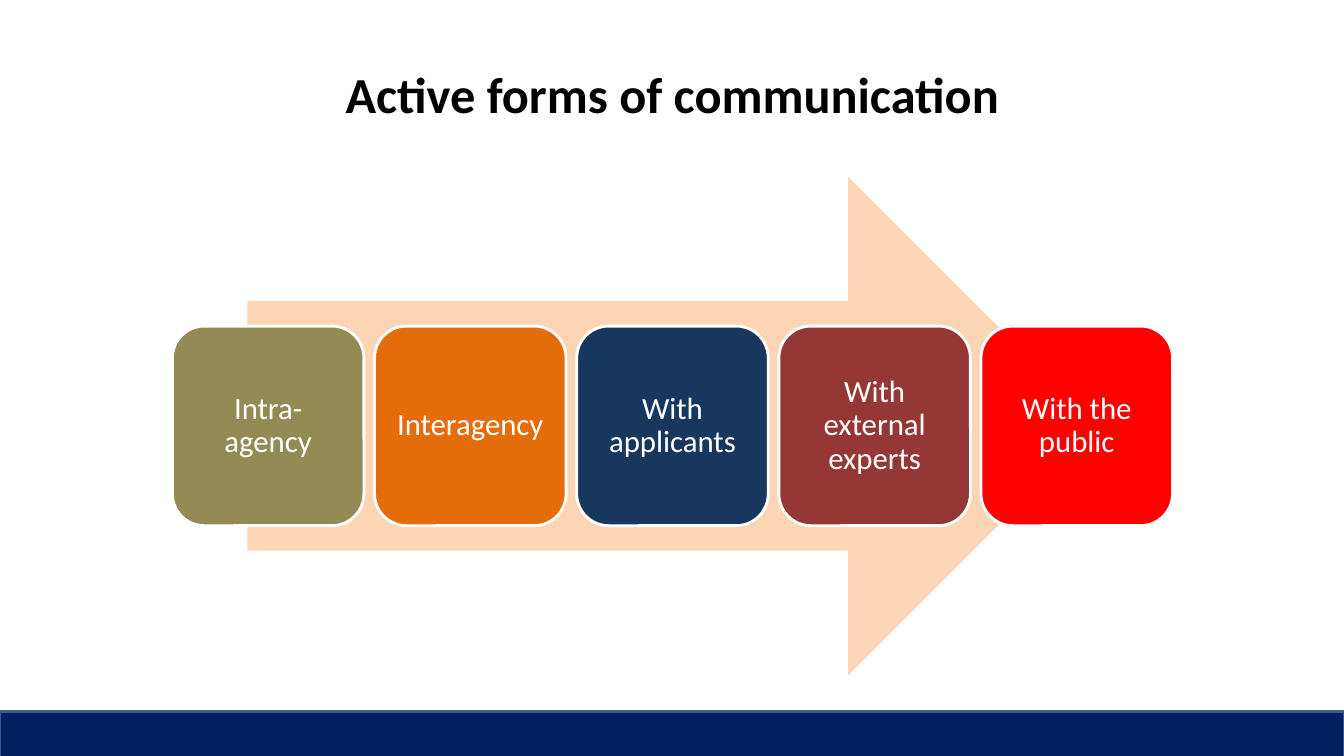
from dataclasses import dataclass

from pptx import Presentation
from pptx.dml.color import RGBColor
from pptx.enum.shapes import MSO_SHAPE as SHAPE
from pptx.enum.text import MSO_ANCHOR as ANCHOR, PP_ALIGN as ALIGN
from pptx.util import Inches, Pt


@dataclass(frozen=True)
class Theme:
    font: str = "Calibri"
    title_size: int = 36
    step_size: int = 22
    line_width: int = 2
    title: str = "000000"
    light: str = "FFFFFF"
    arrow: str = "FCD5B5"
    footer: str = "002060"
    footer_line: str = "3A5F8C"


THEME = Theme()
SLIDE_W, SLIDE_H = 13.33, 7.5
STEPS = [
    ("Intra-agency", "948A54"),
    ("Interagency", "E46C0A"),
    ("With applicants", "17375E"),
    ("With external experts", "953735"),
    ("With the public", "FF0000"),
]


def add_shape(slide, kind, box, fill, line=None):
    sp = slide.shapes.add_shape(kind, *map(Inches, box))
    sp.shadow.inherit = False
    sp.fill.solid()
    sp.fill.fore_color.rgb = RGBColor.from_string(fill)
    if line:
        sp.line.color.rgb = RGBColor.from_string(line)
        sp.line.width = Pt(THEME.line_width)
    else:
        sp.line.fill.background()
    return sp


def set_text(sp, text, size, color, bold=False, spacing=1.0):
    """Write one centred paragraph in the middle of a shape."""
    tf = sp.text_frame
    tf.word_wrap = True
    tf.vertical_anchor = ANCHOR.MIDDLE
    tf.text = text
    p = tf.paragraphs[0]
    p.alignment = ALIGN.CENTER
    p.line_spacing = spacing
    font = p.runs[0].font
    font.name, font.size, font.bold = THEME.font, Pt(size), bold
    font.color.rgb = RGBColor.from_string(color)


def add_title(slide, box, text):
    sp = slide.shapes.add_textbox(*map(Inches, box))
    set_text(sp, text, THEME.title_size, THEME.title, bold=True)


def add_process(slide, box, steps, gap=0.105):
    """Lay equal step cards in a row over a wide arrow."""
    left, top, width, height = box
    arrow_w, card_h = width * 0.85, height * 0.4
    add_shape(slide, SHAPE.RIGHT_ARROW,
              (left + (width - arrow_w) / 2, top, arrow_w, height), THEME.arrow)

    card_w = (width - gap * (len(steps) - 1)) / len(steps)
    card_top = top + (height - card_h) / 2
    for i, (label, fill) in enumerate(steps):
        card = add_shape(slide, SHAPE.ROUNDED_RECTANGLE,
                         (left + i * (card_w + gap), card_top, card_w, card_h),
                         fill, THEME.light)
        tf = card.text_frame
        tf.margin_left = tf.margin_right = Inches(0.09)
        tf.margin_top = tf.margin_bottom = Inches(0.09)
        set_text(card, label, THEME.step_size, THEME.light, spacing=0.9)


def add_footer(slide, box):
    add_shape(slide, SHAPE.RECTANGLE, box, THEME.footer, THEME.footer_line)


def main():
    prs = Presentation()
    prs.slide_width, prs.slide_height = Inches(SLIDE_W), Inches(SLIDE_H)
    s = prs.slides.add_slide(prs.slide_layouts[6])
    add_title(s, (0.67, 0.3, 12, 1.25), "Active forms of communication")
    add_process(s, (1.71, 1.75, 9.92, 4.95), STEPS)
    add_footer(s, (0, 7.06, SLIDE_W, 0.47))
    prs.save("out.pptx")


if __name__ == "__main__":
    main()
